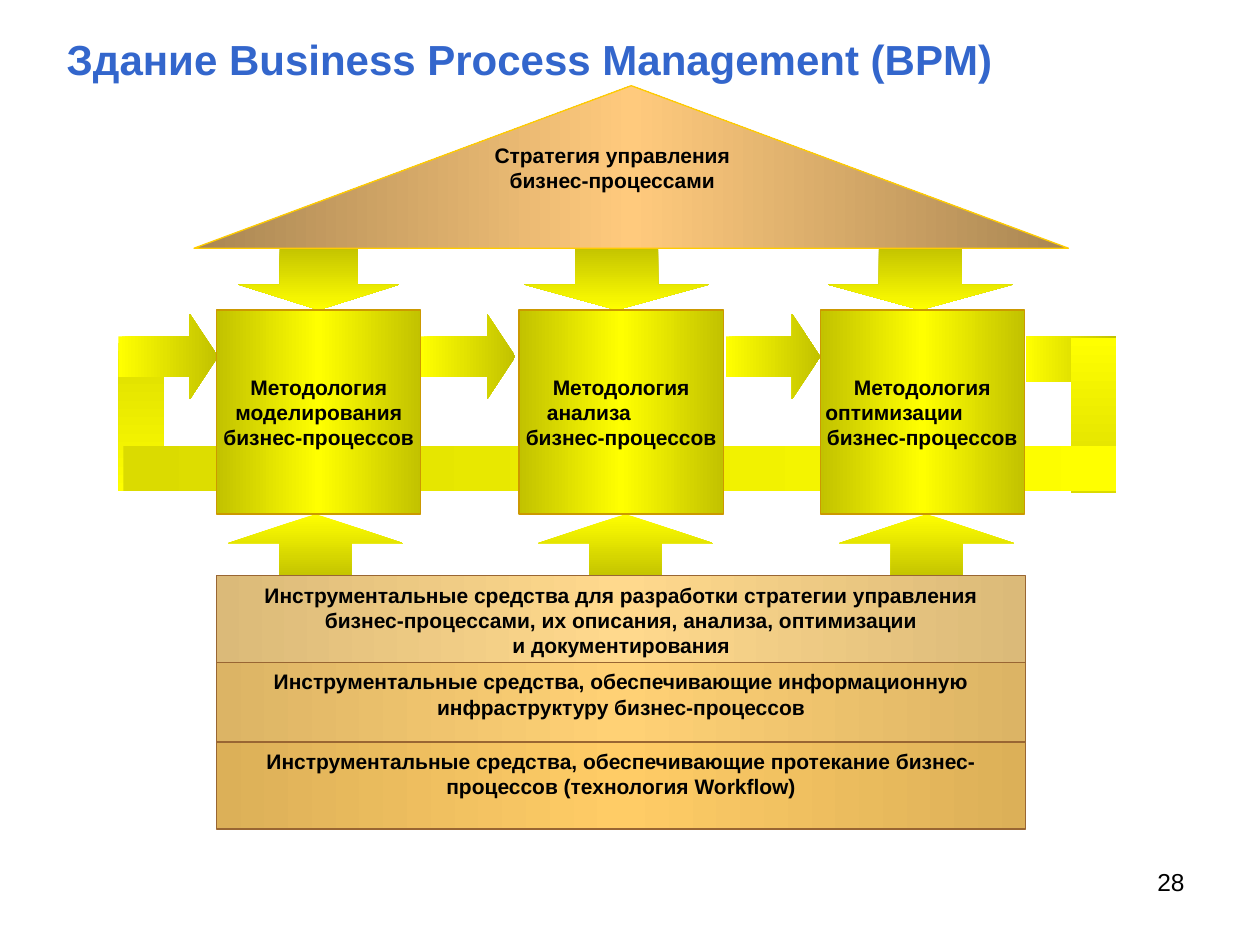
from copy import deepcopy
from dataclasses import dataclass

from pptx import Presentation
from pptx import util as u
from pptx.dml.color import RGBColor
from pptx.enum import shapes, text
from pptx.oxml.ns import qn


@dataclass(frozen=True)
class Theme:
    """Colours, font and type sizes of the deck."""
    font: str = "Arial"
    title_size: int = 24
    number_size: int = 14
    body_size: int = 12
    title: str = "3366CC"
    ink: str = "000000"
    yellow: str = "FFFF00"
    soft: str = "DBDB00"
    olive: str = "C2C200"
    roof_line: str = "FFCC00"
    pillar_line: str = "CC9900"
    floor_line: str = "996633"
    roof: tuple = ("A98653", "FFCA7D", "A98653")
    floors: tuple = (
        ("DBBA79", "FFD98D", "DBBA79"),
        ("DCB465", "FFD175", "DCB465"),
        ("DCB058", "FFCC66", "DCB058"),
    )


class Painter:
    """Draws styled elements on the current slide."""

    def __init__(self, page, theme):
        self.page = page
        self.theme = theme

    def shape(self, kind, frame, colours, vertical=False, line=None, adjust=()):
        """Add a preset shape with an evenly spaced gradient."""
        shape = self.page.shapes.add_shape(kind, *map(u.Inches, frame))
        shape.shadow.inherit = False
        for index, value in enumerate(adjust):
            shape.adjustments[index] = value
        shape.fill.gradient()
        shape.fill.gradient_angle = 270 if vertical else 0
        stops = shape.element.spPr.find(qn("a:gradFill")).find(qn("a:gsLst"))
        for _ in colours[2:]:
            stops.append(deepcopy(stops[-1]))
        for index, (stop, colour) in enumerate(zip(shape.fill.gradient_stops, colours)):
            stop.position = index / (len(colours) - 1)
            stop.color.rgb = RGBColor.from_string(colour)
        if line:
            shape.line.color.rgb = RGBColor.from_string(line)
            shape.line.width = u.Pt(0.75)
        else:
            shape.line.fill.background()
        return shape

    def caption(self, shape, lines, size, colour, bold=True, align=text.PP_ALIGN.CENTER,
                anchor=text.MSO_ANCHOR.TOP, insets=(0.1, 0.05), indents=None):
        """Fill a shape with paragraphs; indented ones are set flush left."""
        frame = shape.text_frame
        frame.word_wrap = True
        frame.vertical_anchor = anchor
        frame.margin_left = frame.margin_right = u.Inches(insets[0])
        frame.margin_top = frame.margin_bottom = u.Inches(insets[1])
        for index, line in enumerate(lines):
            para = frame.add_paragraph() if index else frame.paragraphs[0]
            para.text = line
            para.alignment = align
            if indents and index in indents:
                para.alignment = text.PP_ALIGN.LEFT
                properties = para._p.get_or_add_pPr()
                properties.set("marL", str(u.Inches(indents[index])))
                properties.set("indent", "0")
            para.font.name = self.theme.font
            para.font.size = u.Pt(size)
            para.font.bold = bold
            para.font.color.rgb = RGBColor.from_string(colour)

    def label(self, frame, line, size, colour, **style):
        """Add a text box."""
        box = self.page.shapes.add_textbox(*map(u.Inches, frame))
        self.caption(box, [line], size, colour, **style)


def main():
    """Build the slide and save it."""
    theme = Theme()
    preset = shapes.MSO_SHAPE
    middle = text.MSO_ANCHOR.MIDDLE
    deck = Presentation()
    deck.slide_width, deck.slide_height = u.Inches(10), u.Inches(7.5)
    painter = Painter(deck.slides.add_slide(deck.slide_layouts[6]), theme)

    painter.label((7.17, 6.83, 2.33, 0.52), "28", theme.number_size, theme.ink,
                  bold=False, align=text.PP_ALIGN.RIGHT)
    painter.label((0.43, 0.13, 8.65, 0.67), "Здание Business Process Management (BPM)",
                  theme.title_size, theme.title, align=text.PP_ALIGN.LEFT, anchor=middle)

    for left in (1.81, 4.27, 6.66):
        painter.shape(preset.UP_ARROW, (left, 4.08, 1.39, 0.51),
                      (theme.yellow, theme.olive), vertical=True, adjust=(0.41, 0.454))
    for left, width, shaft in ((1.89, 1.28, 0.484), (4.16, 1.47, 0.448), (6.57, 1.47, 0.448)):
        painter.shape(preset.DOWN_ARROW, (left, 1.95, width, 0.51),
                      (theme.olive, theme.yellow), vertical=True, adjust=(shaft, 0.395))

    painter.shape(preset.ISOSCELES_TRIANGLE, (1.54, 0.68, 6.94, 1.29), theme.roof,
                  line=theme.roof_line)
    painter.label((3.67, 1.13, 2.38, 0.48), "Стратегия управления бизнес-процессами",
                  theme.body_size, theme.ink, insets=(0.02, 0))

    painter.shape(preset.RECTANGLE, (8.14, 2.67, 0.72, 0.36), (theme.yellow, theme.olive))
    painter.shape(preset.RECTANGLE, (8.5, 2.68, 0.36, 1.23),
                  (theme.yellow, theme.soft), vertical=True)
    painter.shape(preset.RECTANGLE, (0.94, 2.72, 0.36, 1.18),
                  (theme.soft, theme.yellow), vertical=True)
    for left, width in ((0.94, 0.79), (3.34, 0.75), (5.76, 0.75)):
        painter.shape(preset.RIGHT_ARROW, (left, 2.49, width, 0.68),
                      (theme.yellow, theme.olive), adjust=(0.473, 0.33))
    painter.shape(preset.RECTANGLE, (0.98, 3.54, 7.88, 0.36), (theme.soft, theme.yellow))

    pillars = (
        (1.72, ("моделирования бизнес-процессов",), None),
        (4.12, ("анализа", "бизнес-процессов"), {1: 0.2}),
        (6.51, ("оптимизации", "бизнес-процессов"), {1: 0.02}),
    )
    for left, lines, indents in pillars:
        pillar = painter.shape(preset.RECTANGLE, (left, 2.46, 1.62, 1.62),
                               (theme.olive, theme.yellow, theme.olive),
                               line=theme.pillar_line)
        painter.caption(pillar, ("Методология", *lines), theme.body_size, theme.ink,
                        anchor=middle, insets=(0.02, 0.01), indents=indents)

    floors = (
        (0.69, "Инструментальные средства для разработки стратегии управления "
               "бизнес-процессами, их описания, анализа, оптимизации\vи документирования"),
        (0.63, "Инструментальные средства, обеспечивающие информационную "
               "инфраструктуру бизнес-процессов"),
        (0.69, "Инструментальные средства, обеспечивающие протекание "
               "бизнес-процессов (технология Workflow)"),
    )
    top = 4.57
    for (height, line), colours in zip(floors, theme.floors):
        floor = painter.shape(preset.RECTANGLE, (1.72, top, 6.42, height), colours,
                              line=theme.floor_line)
        painter.caption(floor, [line], theme.body_size, theme.ink)
        top += height

    deck.save("out.pptx")


if __name__ == "__main__":
    main()
